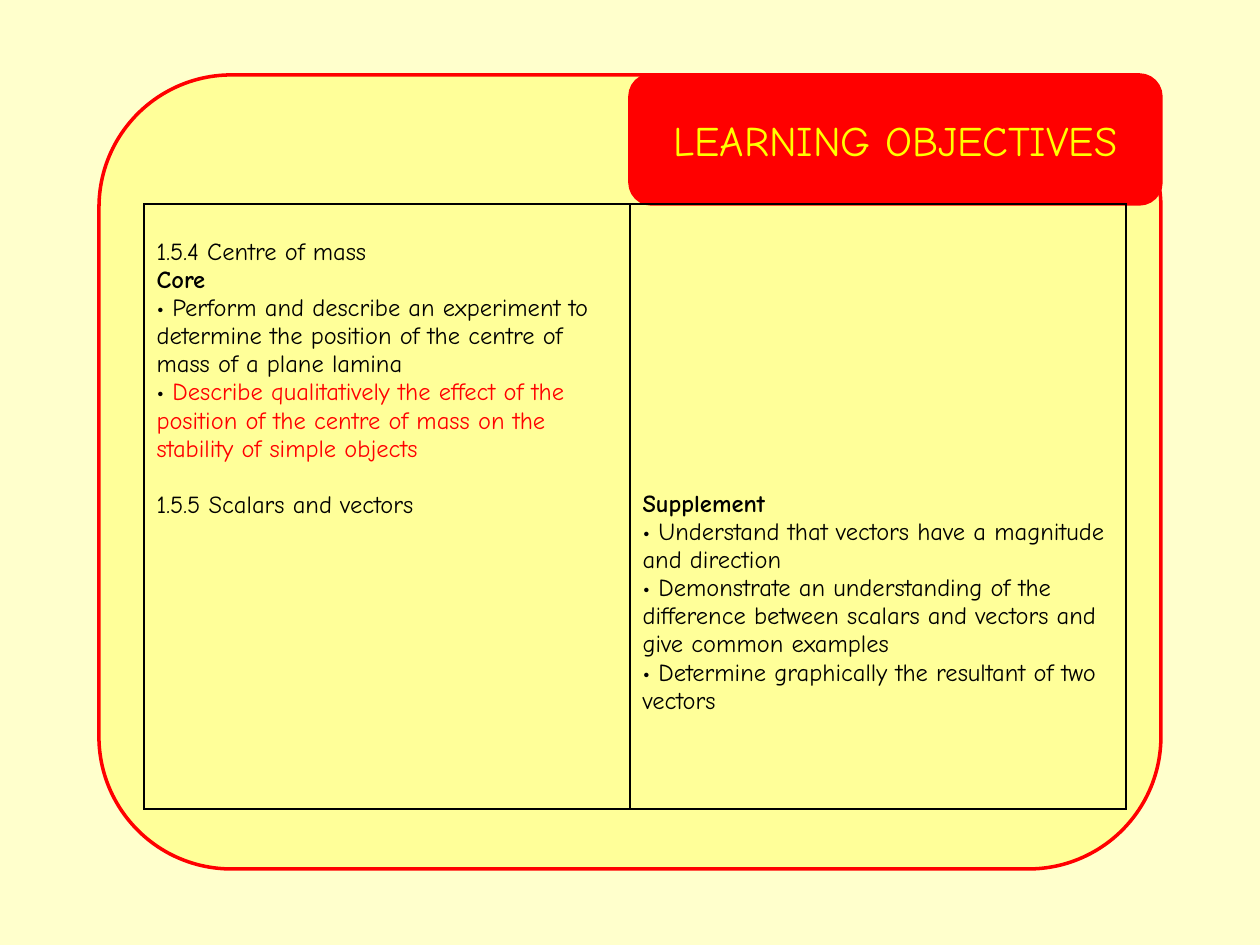
from lxml import etree
from pptx import Presentation, util as u
from pptx.dml.color import RGBColor
from pptx.enum import shapes, text
from pptx.oxml import ns

PX = 914400 // 126
COLORS = {"page": "FFFFCC", "panel": "FFFF99", "red": "FF0000",
          "yellow": "FFFF00", "black": "000000"}
FONT = "Comic Neue"
LINE = 28
INSET = 6

TITLE = "LEARNING OBJECTIVES"
PANELS = [
    ("RECTANGLE", (0, 0, 1260, 945), "page", None, ""),
    ("ROUNDED_RECTANGLE", (99, 75, 1062, 794), "panel", "red", ""),
    ("ROUNDED_RECTANGLE", (630, 75, 531, 129), "red", "red", TITLE),
]
TABLE_BOX = (144, 204, 982, 605)
PLAIN, BOLD, RED = {}, {"bold": True}, {"color": "red"}
COLUMNS = [
    {"width": 486, "lines_above": 1, "paragraphs": [
        (0, [("1.5.4 Centre of mass", PLAIN)]),
        (0, [("Core", BOLD)]),
        (0, [("• Perform and describe an experiment to determine the position "
              "of the centre of mass of a plane lamina", PLAIN)]),
        (0, [("• ", PLAIN),
             ("Describe qualitatively the effect of the position of the centre "
              "of mass on the stability of simple objects", RED)]),
        (1, [("1.5.5 Scalars and vectors", PLAIN)]),
    ]},
    {"width": 496, "lines_above": 10, "paragraphs": [
        (0, [("Supplement", BOLD)]),
        (0, [("• Understand that vectors have a magnitude and direction", PLAIN)]),
        (0, [("• Demonstrate an understanding of the difference between scalars "
              "and vectors and give common examples", PLAIN)]),
        (0, [("• Determine graphically the resultant of two vectors", PLAIN)]),
    ]},
]


def px(*lengths):
    return [u.Emu(length * PX) for length in lengths]


def rgb(name):
    return RGBColor.from_string(COLORS[name])


def add_run(paragraph, words, color="black", **values):
    run = paragraph.add_run()
    run.text = words
    for name, value in {"name": FONT, "size": u.Pt(14), "bold": False, **values}.items():
        setattr(run.font, name, value)
    run.font.color.rgb = rgb(color)


def add_panel(slide, kind, box, fill, line, words):
    shape = slide.shapes.add_shape(shapes.MSO_SHAPE[kind], *px(*box))
    shape.shadow.inherit = False
    shape.fill.solid()
    shape.fill.fore_color.rgb = rgb(fill)
    if line:
        shape.line.color.rgb = rgb(line)
        shape.line.width = u.Pt(2)
    else:
        shape.line.fill.background()
    if words:
        shape.text_frame.vertical_anchor = text.MSO_ANCHOR.MIDDLE
        paragraph = shape.text_frame.paragraphs[0]
        paragraph.alignment = text.PP_ALIGN.CENTER
        add_run(paragraph, words, "yellow", size=u.Pt(24))


def add_borders(cell):
    properties = cell._tc.get_or_add_tcPr()
    for index, side in enumerate(("lnL", "lnR", "lnT", "lnB")):
        border = etree.Element(ns.qn(f"a:{side}"), w=str(u.Pt(1)))
        fill = etree.SubElement(border, ns.qn("a:solidFill"))
        etree.SubElement(fill, ns.qn("a:srgbClr"), val=COLORS["black"])
        properties.insert(index, border)


def fill_cell(cell, content):
    cell.fill.background()
    add_borders(cell)
    cell.margin_top = px(INSET + content["lines_above"] * LINE)[0]
    frame = cell.text_frame
    for index, (gap, runs) in enumerate(content["paragraphs"]):
        paragraph = frame.add_paragraph() if index else frame.paragraphs[0]
        paragraph.space_before = px(gap * LINE)[0]
        for words, style in runs:
            add_run(paragraph, words, **style)


def add_objectives(slide):
    table = slide.shapes.add_table(1, len(COLUMNS), *px(*TABLE_BOX)).table
    for name in ("first_row", "horz_banding"):
        setattr(table, name, False)
    for index, content in enumerate(COLUMNS):
        table.columns[index].width = px(content["width"])[0]
        fill_cell(table.cell(0, index), content)


def main():
    presentation = Presentation()
    presentation.slide_width, presentation.slide_height = u.Inches(10), u.Inches(7.5)
    slide = presentation.slides.add_slide(presentation.slide_layouts[6])
    for panel in PANELS:
        add_panel(slide, *panel)
    add_objectives(slide)
    presentation.save("out.pptx")


if __name__ == "__main__":
    main()
